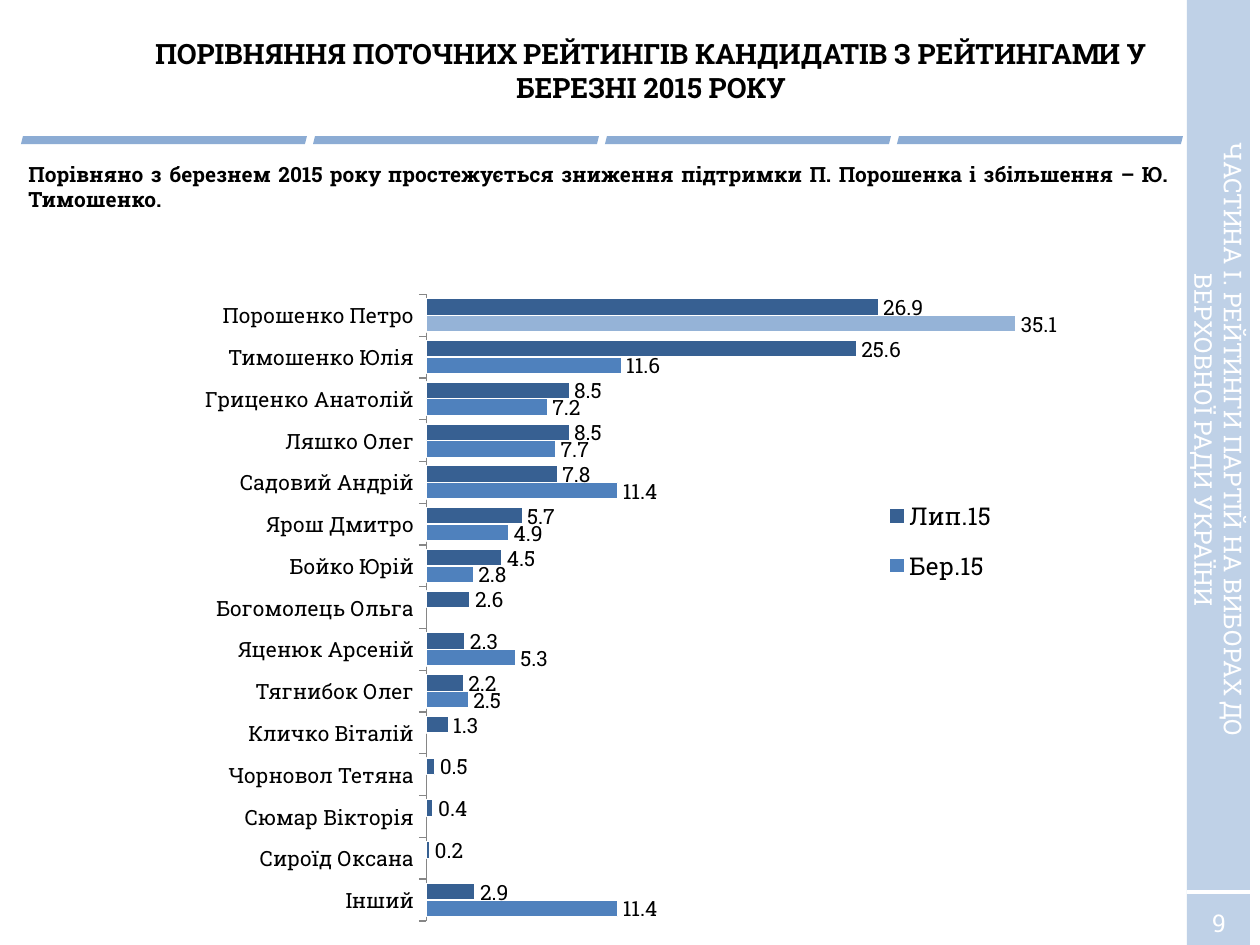
from lxml import etree
from pptx import Presentation
from pptx.chart.data import CategoryChartData
from pptx.dml.color import RGBColor
from pptx.enum.chart import XL_CHART_TYPE, XL_LABEL_POSITION, XL_LEGEND_POSITION, XL_TICK_MARK
from pptx.enum.shapes import MSO_CONNECTOR, MSO_SHAPE
from pptx.enum.text import MSO_ANCHOR, PP_ALIGN
from pptx.oxml.ns import qn
from pptx.util import Emu, Pt

CENTER, JUSTIFY = PP_ALIGN.CENTER, PP_ALIGN.JUSTIFY
TOP, MIDDLE = MSO_ANCHOR.TOP, MSO_ANCHOR.MIDDLE
RECTANGLE, PARALLELOGRAM = MSO_SHAPE.RECTANGLE, MSO_SHAPE.PARALLELOGRAM
PX = 914400 // 126
FONT = "Roboto Slab"
BLACK = RGBColor(0x00, 0x00, 0x00)
WHITE = RGBColor(0xFF, 0xFF, 0xFF)
BLUE = RGBColor(0x4F, 0x81, 0xBD)
LIGHT_BLUE = RGBColor(0x95, 0xB3, 0xD7)
DARK_BLUE = RGBColor(0x37, 0x60, 0x92)
AXIS_GRAY = RGBColor(0x86, 0x86, 0x86)

# Content
TITLE = "ПОРІВНЯННЯ ПОТОЧНИХ РЕЙТИНГІВ КАНДИДАТІВ З РЕЙТИНГАМИ У БЕРЕЗНІ 2015 РОКУ"
SUMMARY = ("Порівняно з березнем 2015 року простежується зниження підтримки "
           "П. Порошенка і збільшення – Ю. Тимошенко.")
SECTION = "ЧАСТИНА I. РЕЙТИНГИ ПАРТІЙ НА ВИБОРАХ ДО ВЕРХОВНОЇ РАДИ УКРАЇНИ"
PAGE = "9"
PERIODS = [("Бер.15", BLUE), ("Лип.15", DARK_BLUE)]
RATINGS = [  # candidate, March, July; bottom to top
    ("Інший", 11.4, 2.9),
    ("Сироїд Оксана", None, 0.2),
    ("Сюмар Вікторія", None, 0.4),
    ("Чорновол Тетяна", None, 0.5),
    ("Кличко Віталій", None, 1.3),
    ("Тягнибок Олег", 2.5, 2.2),
    ("Яценюк Арсеній", 5.3, 2.3),
    ("Богомолець Ольга", None, 2.6),
    ("Бойко Юрій", 2.8, 4.5),
    ("Ярош Дмитро", 4.9, 5.7),
    ("Садовий Андрій", 11.4, 7.8),
    ("Ляшко Олег", 7.7, 8.5),
    ("Гриценко Анатолій", 7.2, 8.5),
    ("Тимошенко Юлія", 11.6, 25.6),
    ("Порошенко Петро", 35.1, 26.9),
]


def px(*lengths):
    return [Emu(length * PX) for length in lengths]


def set_font(font, size, color=BLACK, bold=False):
    for name, value in {"name": FONT, "size": Pt(size), "bold": bold}.items():
        setattr(font, name, value)
    font.color.rgb = color


def write(shape, text, size, color=BLACK, bold=False, align=CENTER, anchor=TOP):
    frame = shape.text_frame
    frame.word_wrap = True
    frame.vertical_anchor = anchor
    frame.text = text
    paragraph = frame.paragraphs[0]
    paragraph.alignment = align
    set_font(paragraph.runs[0].font, size, color, bold)


def add_tint(kind, box, color, opacity):
    shape = slide.shapes.add_shape(kind, *px(*box))
    shape.shadow.inherit = False
    shape.line.fill.background()
    shape.fill.solid()
    shape.fill.fore_color.rgb = color
    rgb = shape.fill._xPr.find(".//" + qn("a:srgbClr"))
    etree.SubElement(rgb, qn("a:alpha"), val=str(opacity * 1000))


def place(parent, index, inner, **fractions):
    for old in parent.findall(qn("c:layout")):
        parent.remove(old)
    layout = etree.Element(qn("c:layout"))
    manual = etree.SubElement(layout, qn("c:manualLayout"))
    settings = {"layoutTarget": "inner"} if inner else {}
    settings.update(xMode="edge", yMode="edge", **fractions)
    for name, value in settings.items():
        etree.SubElement(manual, qn("c:" + name), val=str(value))
    parent.insert(index, layout)


presentation = Presentation()
presentation.slide_width, presentation.slide_height = px(1260, 945)
slide = presentation.slides.add_slide(presentation.slide_layouts[5])

# Side band and divider under the title
add_tint(RECTANGLE, (1187, 0, 63, 945), LIGHT_BLUE, 60)
for number in range(4):
    add_tint(PARALLELOGRAM, (21 + number * 292, 136, 286, 8), BLUE, 65)

# Page number
page = slide.shapes.add_textbox(*px(1182, 901, 74, 43))
write(page, PAGE, 14, WHITE, anchor=MIDDLE)
rule = slide.shapes.add_connector(MSO_CONNECTOR.STRAIGHT, *px(1187, 892, 1250, 892))
rule.line.color.rgb = WHITE
rule.line.width = Pt(2)
etree.SubElement(rule._element.spPr, qn("a:effectLst"))

# Title
title = slide.shapes.title
title.left, title.top, title.width, title.height = px(126, 23, 1050, 95)
write(title, TITLE, 16, bold=True, anchor=MIDDLE)

# Ratings chart
ratings = CategoryChartData(number_format="0.0")
ratings.categories = [row[0] for row in RATINGS]
for column, (period, _) in enumerate(PERIODS, start=1):
    ratings.add_series(period, [row[column] for row in RATINGS])
chart = slide.shapes.add_chart(
    XL_CHART_TYPE.BAR_CLUSTERED, *px(94, 275, 1026, 648), ratings).chart
chart.has_title = False
chart.font.name, chart.font.size = "Calibri", Pt(18)
chart.font.color.rgb = BLACK
plot = chart.plots[0]
plot.gap_width, plot.overlap, plot.vary_by_categories = 50, 0, False
place(chart._chartSpace.chart.plotArea, 0, True, x=0.324, y=0.03, w=0.655, h=0.967)

for series, (_, color) in zip(plot.series, PERIODS):
    series.format.fill.solid()
    series.format.fill.fore_color.rgb = color
    series.format.line.color.rgb = WHITE
    series.format.line.width = Pt(0.75)
    labels = series.data_labels
    labels.show_value = True
    labels.position = XL_LABEL_POSITION.OUTSIDE_END
    set_font(labels.font, 12)

leader = plot.series[0].points[len(RATINGS) - 1].format
leader.fill.solid()
leader.fill.fore_color.rgb = LIGHT_BLUE
leader.line.color.rgb = WHITE
leader.line.width = Pt(0.75)

candidates = chart.category_axis
candidates.major_tick_mark = XL_TICK_MARK.OUTSIDE
candidates.format.line.color.rgb = AXIS_GRAY
set_font(candidates.tick_labels.font, 12)
scale = chart.value_axis
scale.minimum_scale, scale.maximum_scale = 0, 40
scale.has_major_gridlines = False
scale.visible = False

chart.has_legend = True
legend = chart.legend
legend.position = XL_LEGEND_POSITION.TOP
legend.include_in_layout = False
set_font(legend.font, 14)
place(legend._element, 1, False, x=0.76, y=0.32, w=0.13, h=0.18)

# Section name on the side band
section = slide.shapes.add_textbox(*px(872, 404, 693, 72))
section.rotation = 90
write(section, SECTION, 14, WHITE)

# Summary
summary = slide.shapes.add_textbox(*px(16, 155, 1166, 63))
write(summary, SUMMARY, 12, bold=True, align=JUSTIFY)

presentation.save("out.pptx")
